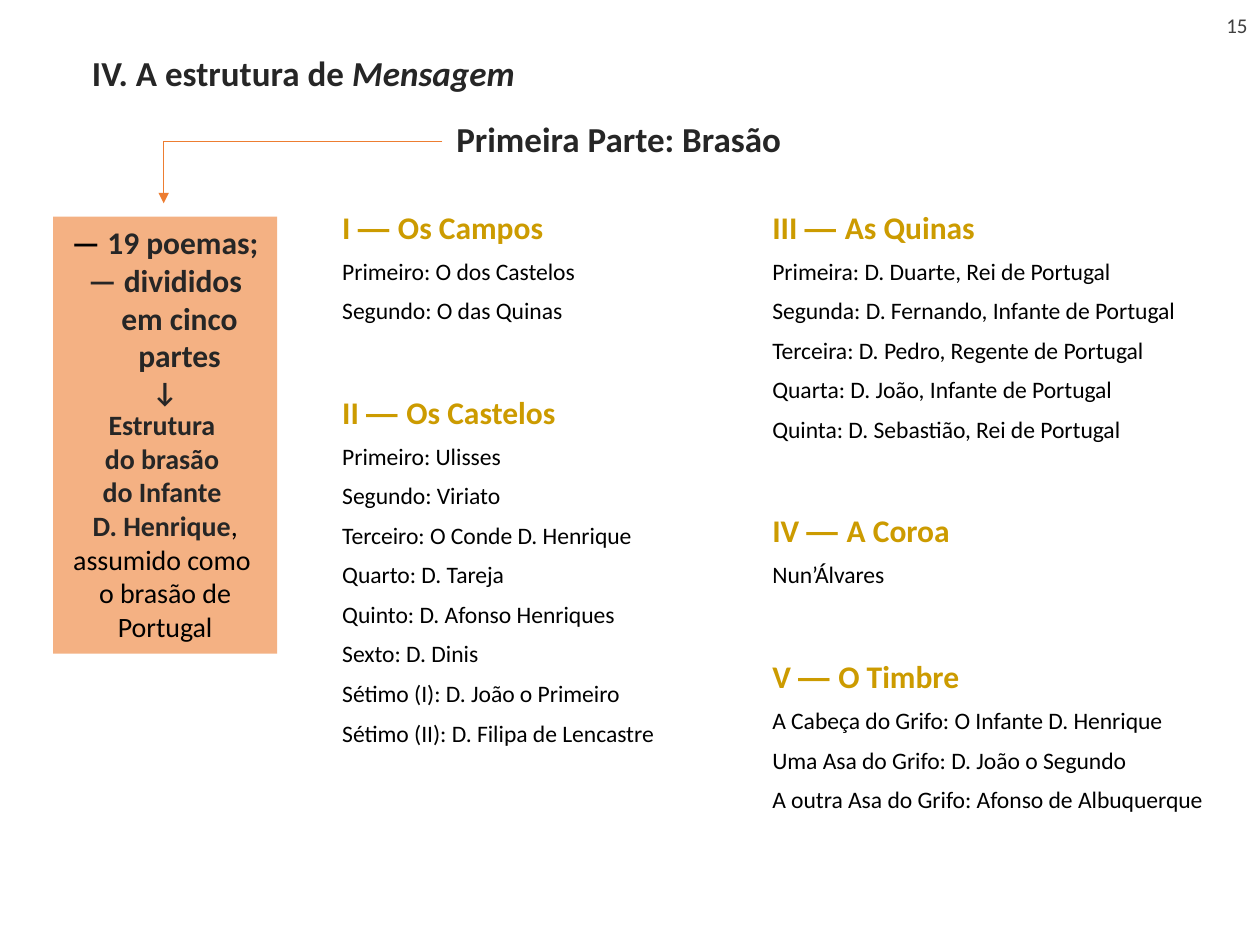
from pptx import Presentation
from pptx.util import Cm, Pt
from pptx.dml.color import RGBColor
from pptx.enum import shapes, text
from pptx.oxml.ns import qn
from lxml import etree

COLORS = {"black": "000000", "dark": "262626", "gray": "404040",
          "gold": "CC9B00", "peach": "F4B183", "orange": "ED7D31"}

STYLES = {
    "title": {"size": Pt(20), "bold": True, "color": "dark"},
    "work": {"size": Pt(20), "bold": True, "italic": True, "color": "dark"},
    "number": {"size": Pt(12), "color": "gray"},
    "heading": {"size": Pt(18), "bold": True, "color": "gold"},
    "dash": {"size": Pt(18), "bold": True, "color": "gold", "name": "Arial"},
    "poem": {"size": Pt(13.5), "bold": False, "color": "black"},
    "mark": {"size": Pt(18), "bold": True, "color": "black"},
    "count": {"size": Pt(18), "bold": True, "color": "dark"},
    "strong": {"size": Pt(16), "bold": True, "color": "dark"},
    "plain": {"size": Pt(16), "bold": False, "color": "black"},
}

TITLE = [("IV. A estrutura de ", "title"), ("Mensagem", "work")]
PART = [("Primeira Parte: Brasão ", "title")]
NUMBER = [("15", "number")]

SUMMARY = [
    ([("— ", "mark"), ("19 poemas;", "count")], True),
    ([("— divididos em cinco partes", "count")], True),
    ([("↓", "strong")], False),
    ([("Estrutura \ndo brasão \ndo Infante \nD. Henrique", "strong"),
      (", assumido como \no brasão de Portugal", "plain")], False),
]

COLUMNS = [
    ((6.65, 4.06, 10.29, 13.72), [
        ("I", "Os Campos", ["Primeiro: O dos Castelos", "Segundo: O das Quinas"]),
        ("II", "Os Castelos", [
            "Primeiro: Ulisses", "Segundo: Viriato",
            "Terceiro: O Conde D. Henrique", "Quarto: D. Tareja",
            "Quinto: D. Afonso Henriques", "Sexto: D. Dinis",
            "Sétimo (I): D. João o Primeiro",
            "Sétimo (II): D. Filipa de Lencastre"]),
    ]),
    ((15.32, 4.06, 9.65, 14.3), [
        ("III", "As Quinas", [
            "Primeira: D. Duarte, Rei de Portugal",
            "Segunda: D. Fernando, Infante de Portugal",
            "Terceira: D. Pedro, Regente de Portugal",
            "Quarta: D. João, Infante de Portugal",
            "Quinta: D. Sebastião, Rei de Portugal"]),
        ("IV", "A Coroa", ["Nun’Álvares"]),
        ("V", "O Timbre", [
            "A Cabeça do Grifo: O Infante D. Henrique",
            "Uma Asa do Grifo: D. João o Segundo",
            "A outra Asa do Grifo: Afonso de Albuquerque"]),
    ]),
]

ARROW_POINTS = [(8.92, 2.85), (3.3, 2.85), (3.3, 4.1)]
SECTION_GAP = Pt(39)
POEM_GAP = Pt(6.4)


def color(name):
    return RGBColor.from_string(COLORS[name])


def place(box):
    return [Cm(length) for length in box]


def write(paragraph, runs, **layout):
    for key, value in layout.items():
        setattr(paragraph, key, value)
    for words, style in runs:
        for index, line in enumerate(words.split("\n")):
            if index:
                paragraph.add_line_break()
            run = paragraph.add_run()
            run.text = line
            for key, value in {"name": "Calibri", **STYLES[style]}.items():
                if key == "color":
                    run.font.color.rgb = color(value)
                else:
                    setattr(run.font, key, value)


def indent(paragraph, left, first):
    properties = paragraph._p.get_or_add_pPr()
    properties.set("marL", str(Cm(left)))
    properties.set("indent", str(Cm(first)))


def prepare(shape, anchor=text.MSO_ANCHOR.TOP):
    frame = shape.text_frame
    for key, value in {"word_wrap": True, "vertical_anchor": anchor,
                       "auto_size": text.MSO_AUTO_SIZE.NONE}.items():
        setattr(frame, key, value)
    return frame


def paragraphs(frame):
    yield frame.paragraphs[0]
    while True:
        yield frame.add_paragraph()


def add_text(slide, box, anchor=text.MSO_ANCHOR.TOP):
    return prepare(slide.shapes.add_textbox(*place(box)), anchor)


def add_column(slide, box, sections):
    lines = paragraphs(add_text(slide, box))
    for index, (numeral, name, poems) in enumerate(sections):
        heading = [(numeral + " ", "heading"), ("— ", "dash"), (name, "heading")]
        write(next(lines), heading, space_before=SECTION_GAP if index else Pt(0))
        for poem in poems:
            write(next(lines), [(poem, "poem")], space_before=POEM_GAP)


def add_summary(slide):
    summary = slide.shapes.add_shape(shapes.MSO_SHAPE.RECTANGLE,
                                     *place((1.07, 4.37, 4.52, 8.81)))
    summary.shadow.inherit = False
    summary.fill.solid()
    summary.fill.fore_color.rgb = color("peach")
    summary.line.fill.background()
    lines = paragraphs(prepare(summary))
    for runs, hanging in SUMMARY:
        line = next(lines)
        write(line, runs, alignment=text.PP_ALIGN.CENTER)
        if hanging:
            indent(line, 0.58, -0.58)


def add_arrow(slide):
    for start, end in zip(ARROW_POINTS, ARROW_POINTS[1:]):
        segment = slide.shapes.add_connector(shapes.MSO_CONNECTOR.STRAIGHT,
                                             *place(start + end))
        segment.line.color.rgb = color("orange")
        segment.line.width = Pt(0.5)
        etree.SubElement(segment._element.spPr, qn("a:effectLst"))
    etree.SubElement(segment.line._get_or_add_ln(), qn("a:tailEnd"), type="triangle")


def main():
    deck = Presentation()
    deck.slide_width, deck.slide_height = Cm(25.4), Cm(19.05)
    slide = deck.slides.add_slide(deck.slide_layouts[5])

    title = slide.shapes.title
    title.left, title.top, title.width, title.height = place((1.22, 1.07, 15.11, 0.97))
    heading = prepare(title).paragraphs[0]
    write(heading, TITLE, alignment=text.PP_ALIGN.LEFT, line_spacing=0.8)
    indent(heading, 1.27, -0.89)

    for box, sections in COLUMNS:
        add_column(slide, box, sections)
    add_summary(slide)
    add_arrow(slide)

    number = add_text(slide, (19.69, 0, 5.71, 1.02), text.MSO_ANCHOR.MIDDLE)
    write(number.paragraphs[0], NUMBER, alignment=text.PP_ALIGN.RIGHT)
    part = add_text(slide, (7.21, 2.41, 10.69, 0.94))
    write(part.paragraphs[0], PART, alignment=text.PP_ALIGN.CENTER, line_spacing=0.8)

    deck.save("out.pptx")


if __name__ == "__main__":
    main()
